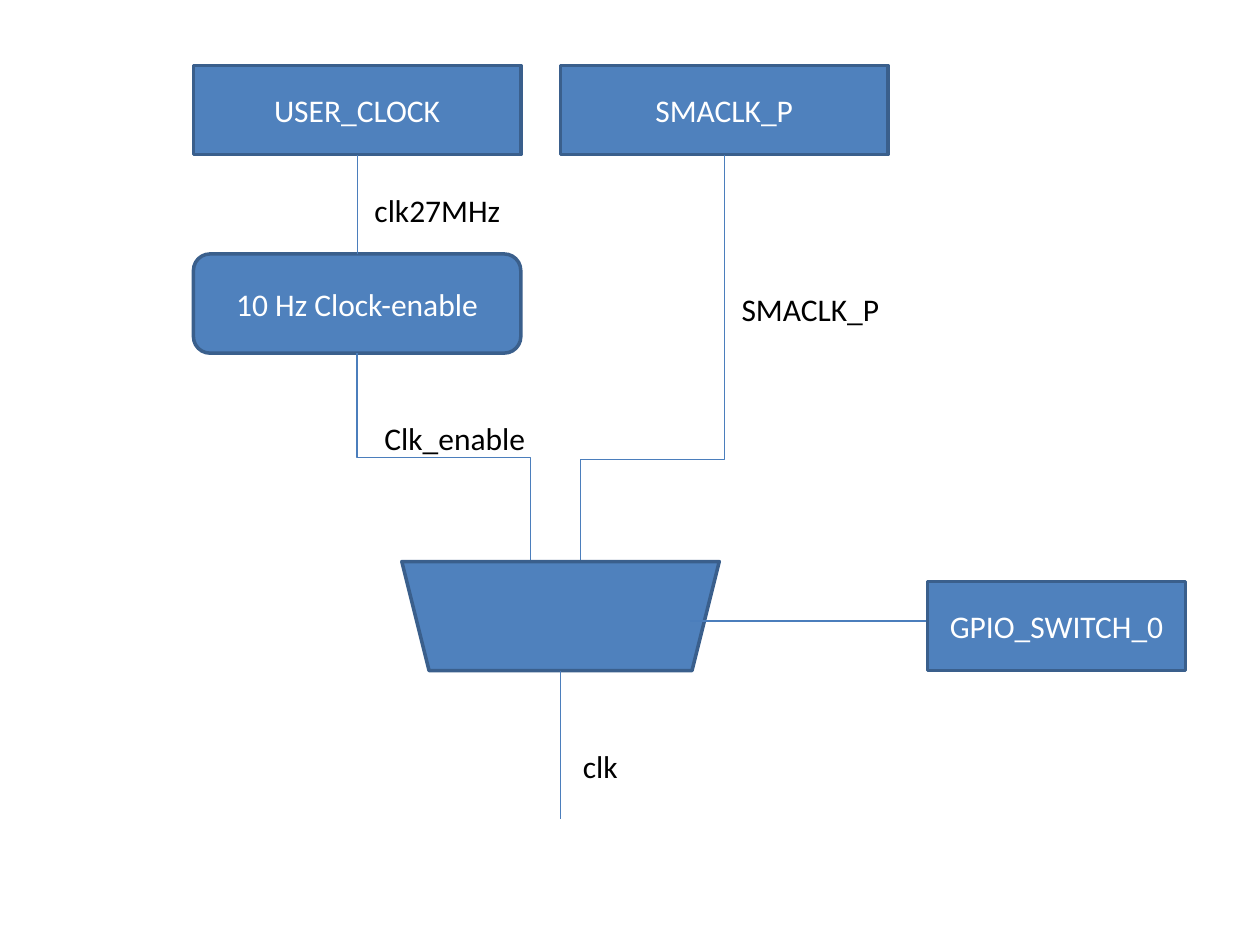
from dataclasses import dataclass

from lxml.etree import SubElement
from pptx import Presentation
from pptx.dml.color import RGBColor
from pptx.enum.shapes import MSO_CONNECTOR, MSO_SHAPE
from pptx.enum.text import MSO_ANCHOR, MSO_AUTO_SIZE, PP_ALIGN
from pptx.oxml.ns import qn
from pptx.shapes.autoshape import Shape
from pptx.shapes.connector import Connector
from pptx.slide import Slide
from pptx.util import Cm, Pt

BLOCK_BLUE = RGBColor(0x4F, 0x81, 0xBD)
BORDER_BLUE = RGBColor(0x3A, 0x5F, 0x8C)
WIRE_BLUE = RGBColor(0x4B, 0x7E, 0xBC)
WHITE = RGBColor(0xFF, 0xFF, 0xFF)
BLACK = RGBColor(0x00, 0x00, 0x00)

FONT_FORMAT = {"name": "Calibri", "size": Pt(18)}
BLOCK_FRAME = {"word_wrap": True, "vertical_anchor": MSO_ANCHOR.MIDDLE}
LABEL_FRAME = {"word_wrap": False, "auto_size": MSO_AUTO_SIZE.SHAPE_TO_FIT_TEXT}


@dataclass(frozen=True)
class Block:
    text: str
    left: float
    top: float
    width: float
    height: float
    geometry: MSO_SHAPE = MSO_SHAPE.RECTANGLE
    rotation: float = 0

    @property
    def center(self) -> float:
        return self.left + self.width / 2

    @property
    def bottom(self) -> float:
        return self.top + self.height


@dataclass(frozen=True)
class SignalLabel:
    text: str
    left: float
    top: float
    width: float
    height: float = 1.02


USER_CLOCK = Block("USER_CLOCK", 3.9, 1.32, 6.6, 1.8)
SMA_CLOCK = Block("SMACLK_P", 11.3, 1.32, 6.6, 1.8)
CLOCK_ENABLE = Block("10 Hz Clock-enable", 3.9, 5.12, 6.6, 2, MSO_SHAPE.ROUNDED_RECTANGLE)
MUX = Block("", 8.1, 11.32, 6.4, 2.2, MSO_SHAPE.TRAPEZOID, 180)
GPIO_SWITCH = Block("GPIO_SWITCH_0", 18.7, 11.72, 5.2, 1.8)

SIGNAL_LABELS = (
    SignalLabel("SMACLK_P", 14.7, 5.72, 3.33),
    SignalLabel("Clk_enable", 7.5, 8.33, 3.38),
    SignalLabel("clk27MHz", 7.3, 3.73, 3.07),
    SignalLabel("clk", 11.5, 14.93, 1.22),
)


def apply_format(target: object, values: dict) -> None:
    for attribute, value in values.items():
        setattr(target, attribute, value)


def write_text(shape: Shape, text: str, color: RGBColor, align: PP_ALIGN, frame: dict) -> None:
    apply_format(shape.text_frame, frame)
    paragraph = shape.text_frame.paragraphs[0]
    paragraph.alignment = align
    run = paragraph.add_run()
    run.text = text
    apply_format(run.font, FONT_FORMAT)
    run.font.color.rgb = color


def draw_block(slide: Slide, block: Block) -> Shape:
    shape = slide.shapes.add_shape(
        block.geometry, Cm(block.left), Cm(block.top), Cm(block.width), Cm(block.height)
    )
    shape.rotation = block.rotation
    shape.shadow.inherit = False
    shape.fill.solid()
    shape.fill.fore_color.rgb = BLOCK_BLUE
    shape.line.color.rgb = BORDER_BLUE
    shape.line.width = Pt(2)
    if block.text:
        write_text(shape, block.text, WHITE, PP_ALIGN.CENTER, BLOCK_FRAME)
    return shape


def draw_label(slide: Slide, label: SignalLabel) -> None:
    box = slide.shapes.add_textbox(
        Cm(label.left), Cm(label.top), Cm(label.width), Cm(label.height)
    )
    write_text(box, label.text, BLACK, PP_ALIGN.LEFT, LABEL_FRAME)


def draw_wire(
    slide: Slide, x1: float, y1: float, x2: float, y2: float,
    kind: MSO_CONNECTOR = MSO_CONNECTOR.STRAIGHT,
) -> Connector:
    wire = slide.shapes.add_connector(kind, Cm(x1), Cm(y1), Cm(x2), Cm(y2))
    wire.line.color.rgb = WIRE_BLUE
    wire.line.width = Pt(0.75)
    SubElement(wire.element.spPr, qn("a:effectLst"))
    return wire


def draw_mux_input(slide: Slide, source: Block, input_x: float, bend: float) -> None:
    drop = MUX.top - source.bottom
    shift = abs(input_x - source.center)
    middle_x = (source.center + input_x) / 2
    middle_y = (source.bottom + MUX.top) / 2
    wire = draw_wire(
        slide, middle_x - drop / 2, middle_y - shift / 2,
        middle_x + drop / 2, middle_y + shift / 2, MSO_CONNECTOR.ELBOW,
    )
    properties = wire.element.spPr
    transform = properties.find(qn("a:xfrm"))
    if input_x < source.center:
        transform.set("rot", "5400000")
    else:
        transform.set("rot", "16200000")
        transform.set("flipH", "1")
    adjustments = properties.find(qn("a:prstGeom")).find(qn("a:avLst"))
    SubElement(adjustments, qn("a:gd"), name="adj1", fmla=f"val {round(bend * 100000)}")


def main() -> None:
    presentation = Presentation()
    presentation.slide_width, presentation.slide_height = Cm(25.4), Cm(19.05)
    slide = presentation.slides.add_slide(presentation.slide_layouts[6])

    user_clock, _, clock_enable = (
        draw_block(slide, block) for block in (USER_CLOCK, SMA_CLOCK, CLOCK_ENABLE)
    )
    clock_wire = draw_wire(
        slide, USER_CLOCK.center, USER_CLOCK.bottom, CLOCK_ENABLE.center, CLOCK_ENABLE.top
    )
    clock_wire.begin_connect(user_clock, 2)
    clock_wire.end_connect(clock_enable, 0)
    draw_mux_input(slide, SMA_CLOCK, 11.7, 0.75)
    draw_mux_input(slide, CLOCK_ENABLE, 10.7, 0.5)

    draw_block(slide, MUX)
    draw_wire(slide, 13.9, 12.52, GPIO_SWITCH.left, 12.52)
    draw_block(slide, GPIO_SWITCH)
    draw_wire(slide, MUX.center, MUX.bottom, MUX.center, MUX.bottom + 3)

    for label in SIGNAL_LABELS:
        draw_label(slide, label)

    presentation.save("out.pptx")


if __name__ == "__main__":
    main()
